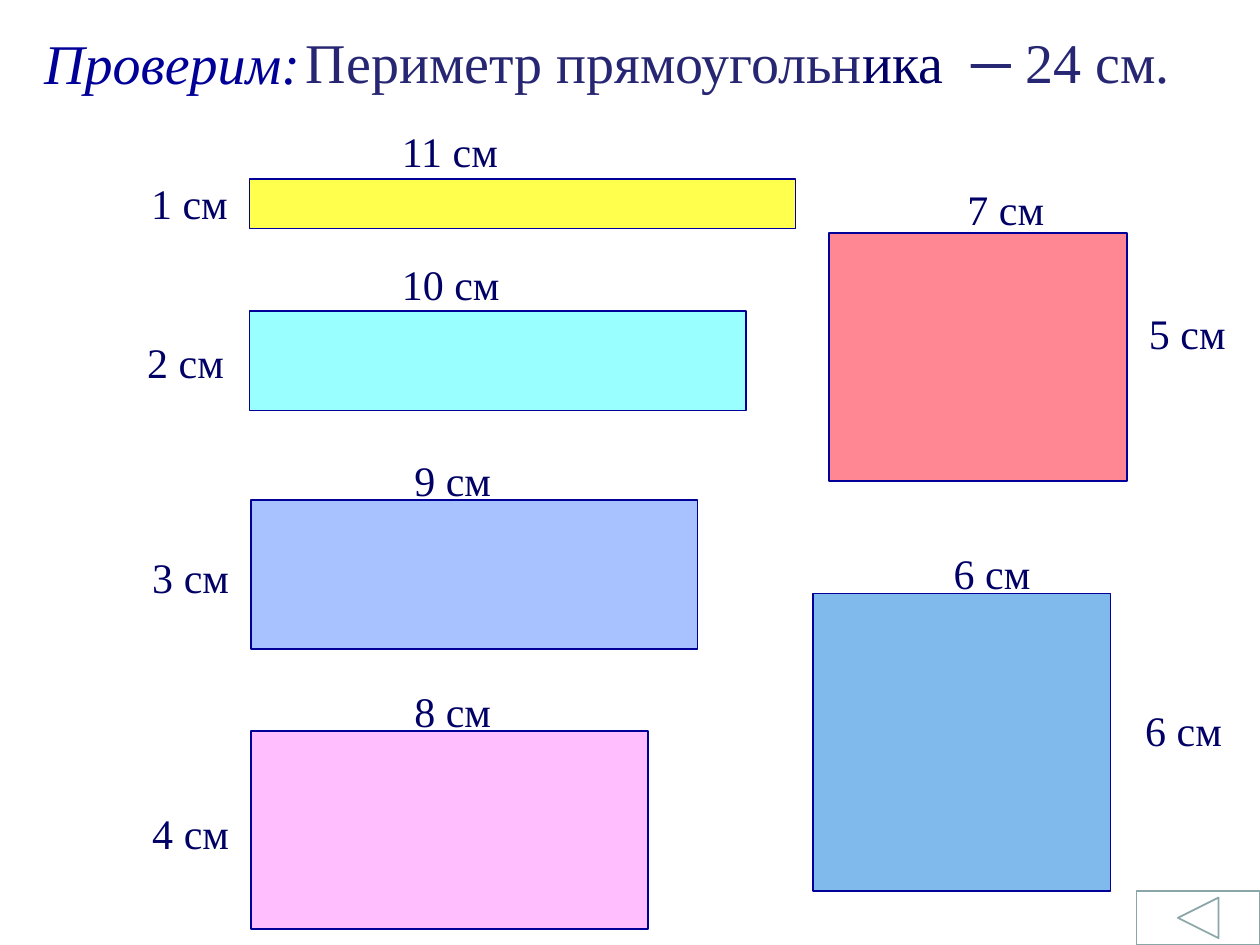
from pptx import Presentation
from pptx import util as u
from pptx.dml.color import RGBColor
from pptx.enum import shapes, text

COLUMNS, ROWS = 100, 75
CELL = u.Inches(0.1)
CM = 3.94  # grid cells per centimetre
FONT = "Times New Roman"
COLORS = {
    "title": "000099", "sentence": "262673", "label": "000066",
    "outline": "000099", "button": "8AA6A8",
    "yellow": "FFFF4E", "cyan": "9AFFFF", "blue": "A8C1FF",
    "pink": "FFBFFF", "sky": "80BAED", "red": "FF8794",
}

# width and height in cm, fill, corner, corners of the width and height labels
RECTANGLES = [
    (11, 1, "yellow", (19.8, 14.2), (30.9, 9.5), (11, 13.6)),
    (10, 2, "cyan", (19.8, 24.7), (30.9, 20), (10.7, 26.2)),
    (9, 3, "blue", (19.9, 39.7), (31.9, 35.6), (11.1, 43.3)),
    (8, 4, "pink", (19.9, 58), (31.9, 53.9), (11.1, 63.6)),
    (6, 6, "sky", (64.5, 47.1), (74.7, 43), (89.9, 55.4)),
    (6, 5, "red", (65.8, 18.5), (75.8, 14.1), (90.2, 23.9)),
]
# the red rectangle is drawn 6 cm wide but labelled 7 cm
WIDTH_LABELS = {"red": 7}


def grid(*cells):
    return [round(c * CELL) for c in cells]


def color(name):
    return RGBColor.from_string(COLORS[name])


def format_run(r, size, name, italic=None):
    r.font.name = FONT
    r.font.size = u.Pt(size)
    r.font.color.rgb = color(name)
    r.font.italic = italic


def add_title(s):
    title = s.shapes.title
    title.left, title.top, title.width, title.height = grid(2.5, 0.8, 33.5, 8.3)
    tf = title.text_frame
    tf.text = "Проверим:"
    tf.auto_size = text.MSO_AUTO_SIZE.NONE
    tf.vertical_anchor = text.MSO_ANCHOR.MIDDLE
    p = tf.paragraphs[0]
    p.alignment = text.PP_ALIGN.LEFT
    format_run(p.runs[0], 32, "title", italic=True)


def add_text(s, box, runs, size, wrap=True):
    """Add a one-line text box from (wording, colour) runs; return its runs."""
    tf = s.shapes.add_textbox(*grid(*box)).text_frame
    tf.word_wrap = wrap
    tf.auto_size = text.MSO_AUTO_SIZE.SHAPE_TO_FIT_TEXT
    p = tf.paragraphs[0]
    for wording, name in runs:
        r = p.add_run()
        r.text = wording
        format_run(r, size, name)
    return p.runs


def add_sentence(s):
    runs = add_text(s, (23.3, 1.7, 73.3, 6.4), [
        ("Периметр прямоугольн", "sentence"), ("ика", "label"),
        (" ", "label"), ("─ 24 см.", "sentence")], 32)
    runs[2].font._element.set("spc", "800")  # wider gap before the dash


def add_label(s, corner, length):
    wide = length >= 10
    add_text(s, (*corner, 10.8 if wide else 8.2, 5),
             [(f"{length} см", "label")], 24, wrap=wide)


def add_outlined(s, kind, box, line):
    sp = s.shapes.add_shape(kind, *grid(*box))
    sp.shadow.inherit = False
    sp.fill.background()
    sp.line.color.rgb = color(line)
    sp.line.width = u.Pt(1)
    return sp


def add_rectangle(s, width, height, fill, corner, width_at, height_at):
    sp = add_outlined(s, shapes.MSO_SHAPE.RECTANGLE,
                      (*corner, width * CM, height * CM), "outline")
    sp.fill.solid()
    sp.fill.fore_color.rgb = color(fill)
    add_label(s, width_at, WIDTH_LABELS.get(fill, width))
    add_label(s, height_at, height)


def main():
    prs = Presentation()
    prs.slide_width, prs.slide_height = grid(COLUMNS, ROWS)
    s = prs.slides.add_slide(prs.slide_layouts[5])
    add_title(s)
    add_sentence(s)
    for rectangle in RECTANGLES:
        add_rectangle(s, *rectangle)
    width, height = 9.8, 4.3
    add_outlined(s, shapes.MSO_SHAPE.ACTION_BUTTON_BACK_OR_PREVIOUS,
                 (COLUMNS - width, ROWS - height, width, height), "button")
    prs.save("out.pptx")


if __name__ == "__main__":
    main()
